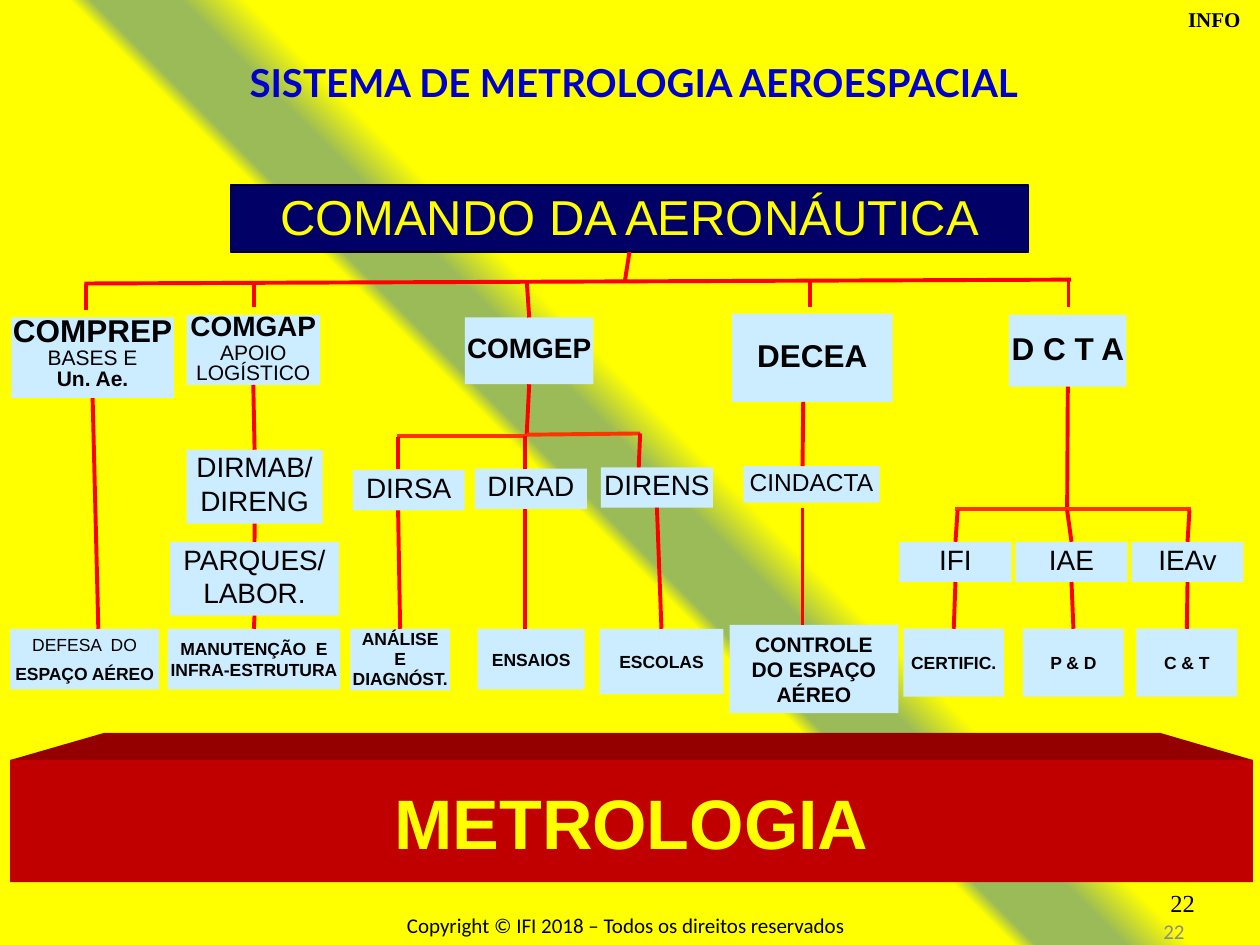
from dataclasses import dataclass
from typing import Optional

from lxml.etree import SubElement
from pptx import Presentation
from pptx.dml.color import RGBColor
from pptx.enum.shapes import MSO_CONNECTOR, MSO_SHAPE
from pptx.enum.text import MSO_ANCHOR, PP_ALIGN
from pptx.oxml import parse_xml
from pptx.oxml.ns import nsdecls, qn
from pptx.util import Pt

COLORS = {
    "yellow": "FFFF00", "green": "9BBB59", "navy": "000066", "title": "0000CC",
    "box": "CCECFF", "black": "000000", "gray": "8C8C8C", "link": "FF0000",
    "branch": "FF3300", "bar": "C00000", "bar_top": "940000",
}
JOIN_TOLERANCE = 3


@dataclass
class Line:
    text: str
    size: float
    bold: bool = False
    spacing: float = 1.0
    before: float = 0


@dataclass
class Box:
    left: float
    top: float
    width: float
    height: float
    lines: tuple[Line, ...]
    bottom: float = 3.6
    side: float = 0
    fill: str = "box"
    color: str = "black"
    outline: Optional[str] = None


@dataclass
class Link:
    x1: float
    y1: float
    x2: float
    y2: float
    color: str = "link"


def rgb(name: str) -> RGBColor:
    return RGBColor.from_string(COLORS[name])


def paint(shape, fill: str, outline: Optional[str] = None) -> None:
    shape.shadow.inherit = False
    shape.fill.solid()
    shape.fill.fore_color.rgb = rgb(fill)
    if outline:
        shape.line.color.rgb = rgb(outline)
        shape.line.width = Pt(0.75)
    else:
        shape.line.fill.background()


def write(frame, lines: tuple[Line, ...], color: str, font: str = "Arial",
          align: PP_ALIGN = PP_ALIGN.CENTER) -> None:
    frame.word_wrap = True
    for index, line in enumerate(lines):
        paragraph = frame.paragraphs[0] if index == 0 else frame.add_paragraph()
        paragraph.text = line.text
        paragraph.alignment = align
        paragraph.line_spacing = line.spacing
        paragraph.space_before = Pt(line.before)
        for run in paragraph.runs:
            run.font.name = font
            run.font.size = Pt(line.size)
            run.font.bold = line.bold
            run.font.color.rgb = rgb(color)


def draw_box(slide, box: Box):
    unit = slide.shapes.add_shape(MSO_SHAPE.RECTANGLE, Pt(box.left), Pt(box.top),
                                  Pt(box.width), Pt(box.height))
    paint(unit, box.fill, box.outline)
    frame = unit.text_frame
    frame.margin_left = frame.margin_right = Pt(box.side)
    frame.margin_top, frame.margin_bottom = 0, Pt(box.bottom)
    frame.vertical_anchor = MSO_ANCHOR.MIDDLE
    write(frame, box.lines, box.color)
    return unit


def draw_link(slide, link: Link, units: list) -> None:
    connector = slide.shapes.add_connector(
        MSO_CONNECTOR.STRAIGHT, Pt(link.x1), Pt(link.y1), Pt(link.x2), Pt(link.y2))
    connector.line.color.rgb = rgb(link.color)
    connector.line.width = Pt(2.25)
    SubElement(connector._element.spPr, qn("a:effectLst"))
    # Join the ends that meet the middle of a box's top or bottom side
    ends = ((link.x1, link.y1, connector.begin_connect),
            (link.x2, link.y2, connector.end_connect))
    for x, y, join in ends:
        for unit in units:
            middle = unit.left + unit.width / 2
            for site, side in ((0, unit.top), (2, unit.top + unit.height)):
                if max(abs(middle - Pt(x)), abs(side - Pt(y))) <= Pt(JOIN_TOLERANCE):
                    join(unit, site)


def draw_label(slide, left: float, top: float, width: float, height: float, line: Line,
               color: str, font: str, align: PP_ALIGN) -> None:
    label = slide.shapes.add_textbox(Pt(left), Pt(top), Pt(width), Pt(height))
    write(label.text_frame, (line,), color, font, align)


def set_background(slide) -> None:
    stops = ((46, "yellow"), (49, "green"), (53, "green"), (54, "yellow"), (60, "yellow"))
    stop_xml = "".join(f'<a:gs pos="{position * 1000}"><a:srgbClr val="{COLORS[name]}"/></a:gs>'
                       for position, name in stops)
    slide.background.fill.solid()
    properties = slide._element.cSld.find(qn("p:bg")).find(qn("p:bgPr"))
    properties.replace(properties[0], parse_xml(
        f'<a:gradFill {nsdecls("a")} rotWithShape="1"><a:gsLst>{stop_xml}</a:gsLst>'
        '<a:lin ang="8100000" scaled="0"/></a:gradFill>'))


def heading(text: str, size: float) -> tuple[Line, ...]:
    return (Line(text, size, True),)


def plain(text: str, size: float = 16) -> tuple[Line, ...]:
    return (Line(text, size),)


LEAF_TOP = 359.3
BOXES = [
    Box(131.8, 105.8, 455.8, 38.2, plain("COMANDO DA AERONÁUTICA", 28),
        fill="navy", color="yellow", outline="black"),
    # Commands
    Box(6.5, 181.4, 92.9, 46.1, (Line("COMPREP", 18, True, 0.8), Line("BASES E", 12, False, 0.85),
                                 Line("Un. Ae.", 12, True, 0.85))),
    Box(106.6, 180, 76.3, 40, (Line("COMGAP", 16, True, 0.8),
                               Line("APOIO LOGÍSTICO", 12, False, 0.8, 1.2)), bottom=0),
    Box(265.7, 181.4, 73.4, 38.2, heading("COMGEP", 16)),
    Box(418.3, 179.3, 91.8, 50.4, heading("DECEA", 18)),
    Box(576.7, 180, 67, 41, heading("D C T A", 18)),
    # Directorates
    Box(106.6, 257, 77.8, 42.2, plain("DIRMAB/ DIRENG")),
    Box(97.2, 309.6, 96.5, 42.2, plain("PARQUES/ LABOR.")),
    Box(201.6, 268.6, 64, 23, plain("DIRSA")),
    Box(271.4, 267.8, 64, 23, plain("DIRAD")),
    Box(343.4, 267.1, 64, 23, plain("DIRENS")),
    Box(424.8, 266.4, 77.8, 20.9, plain("CINDACTA", 14)),
    *(Box(514 + 66.3 * column, 309.6, 64, 23, plain(name))
      for column, name in enumerate(("IFI", "IAE", "IEAv"))),
    # Activities
    Box(5.8, LEAF_TOP, 85, 34.6, (Line("DEFESA  DO", 10), Line("ESPAÇO AÉREO", 10, True, 1, 5)),
        bottom=0),
    Box(95.8, LEAF_TOP, 98.6, 34.6, heading("MANUTENÇÃO  E INFRA-ESTRUTURA", 10), bottom=0),
    Box(200.2, LEAF_TOP, 56.9, 35.3, tuple(Line(text, 10, True, 0.95)
        for text in ("ANÁLISE", "E", "DIAGNÓST.")), bottom=0),
    Box(272.9, LEAF_TOP, 61.2, 34.6, heading("ENSAIOS", 10), bottom=0),
    Box(342.7, LEAF_TOP, 70.6, 37.4, heading("ESCOLAS", 10), bottom=0),
    Box(416.9, 357.1, 96.5, 50.4, heading("CONTROLE DO ESPAÇO AÉREO", 12), bottom=0, side=7.2),
    *(Box(left, LEAF_TOP, 57.6, 38.9, heading(name, 10), bottom=0)
      for left, name in ((516.2, "CERTIFIC."), (584.6, "P & D"), (649.4, "C & T"))),
]
LINKS = [
    # Command level
    Link(357.1, 144, 357.1, 160.5), Link(48.2, 162, 612, 159.8),
    Link(49, 162, 49, 177.1), Link(145.4, 160.6, 145.4, 175.7),
    Link(301, 160.5, 301, 178.6), Link(463, 160.6, 463, 175.7), Link(610.6, 160.6, 610.6, 175.7),
    # COMPREP and COMGAP
    Link(52.6, 227.5, 56.2, 359.3), Link(144.7, 221, 145.4, 257),
    Link(145.4, 299.2, 145.4, 309.6), Link(145.4, 351.8, 145.4, 359.3),
    # COMGEP
    Link(301, 219.6, 301, 248.4), Link(226.8, 249.1, 301, 249.1, "branch"),
    Link(301, 248.4, 365.8, 247.7, "branch"), Link(227.5, 249.8, 227.5, 267.8),
    Link(300.2, 249.1, 300.2, 267.8), Link(365.8, 247.7, 365, 267.1),
    Link(227.5, 291.6, 227.5, 359.3), Link(300.2, 290.9, 300.2, 359.3),
    Link(375.1, 291.6, 375.1, 359.3),
    # DECEA
    Link(459, 229.7, 458.6, 266.4), Link(458.6, 290.2, 458.6, 357.1),
    # D C T A
    Link(612, 221, 609.8, 290.9), Link(545.8, 290.9, 680.4, 290.9, "branch"),
    Link(547.2, 291.6, 546.5, 309.6), Link(609.8, 291.6, 611, 309.6),
    Link(679.7, 291.6, 679, 309.6), Link(546.5, 332.6, 545, 359.3),
    Link(611, 332.6, 612, 359.3), Link(679, 332.6, 678.2, 359.3),
]


def main() -> None:
    presentation = Presentation()
    presentation.slide_width, presentation.slide_height = Pt(720), Pt(540)
    slide = presentation.slides.add_slide(presentation.slide_layouts[5])
    set_background(slide)

    # Title
    title = slide.shapes.title
    title.left, title.top, title.width, title.height = Pt(92.2), Pt(30.2), Pt(540), Pt(33.8)
    write(title.text_frame, heading("SISTEMA DE METROLOGIA AEROESPACIAL", 22), "title", "Lato")

    # Organisation chart
    units = [draw_box(slide, box) for box in BOXES]
    for link in LINKS:
        draw_link(slide, link, units)

    # Foundation bar with its upper face
    outline = slide.shapes.build_freeform(Pt(5.8), Pt(434.3))
    outline.add_line_segments([(Pt(59.5), Pt(418.8)), (Pt(663), Pt(418.8)), (Pt(716), Pt(434.3))])
    paint(outline.convert_to_shape(), "bar_top")
    draw_box(slide, Box(5.8, 434.3, 710.2, 69.9, heading("METROLOGIA", 40), bottom=0,
                        fill="bar", color="yellow"))

    # Corner label, page numbers and copyright
    draw_label(slide, 671.8, 0, 48.2, 21.6, Line("INFO", 12, True), "black",
               "Times New Roman", PP_ALIGN.LEFT)
    draw_label(slide, 540, 504, 149.8, 36, Line("22", 14), "black",
               "Times New Roman", PP_ALIGN.RIGHT)
    draw_label(slide, 516.2, 521.3, 167.8, 18.7, Line("22", 12), "gray", "Calibri", PP_ALIGN.RIGHT)
    draw_label(slide, 225.4, 517.7, 270, 21.6,
               Line("Copyright © IFI 2018 – Todos os direitos reservados", 12), "black",
               "Calibri", PP_ALIGN.LEFT)
    presentation.save("out.pptx")


if __name__ == "__main__":
    main()
